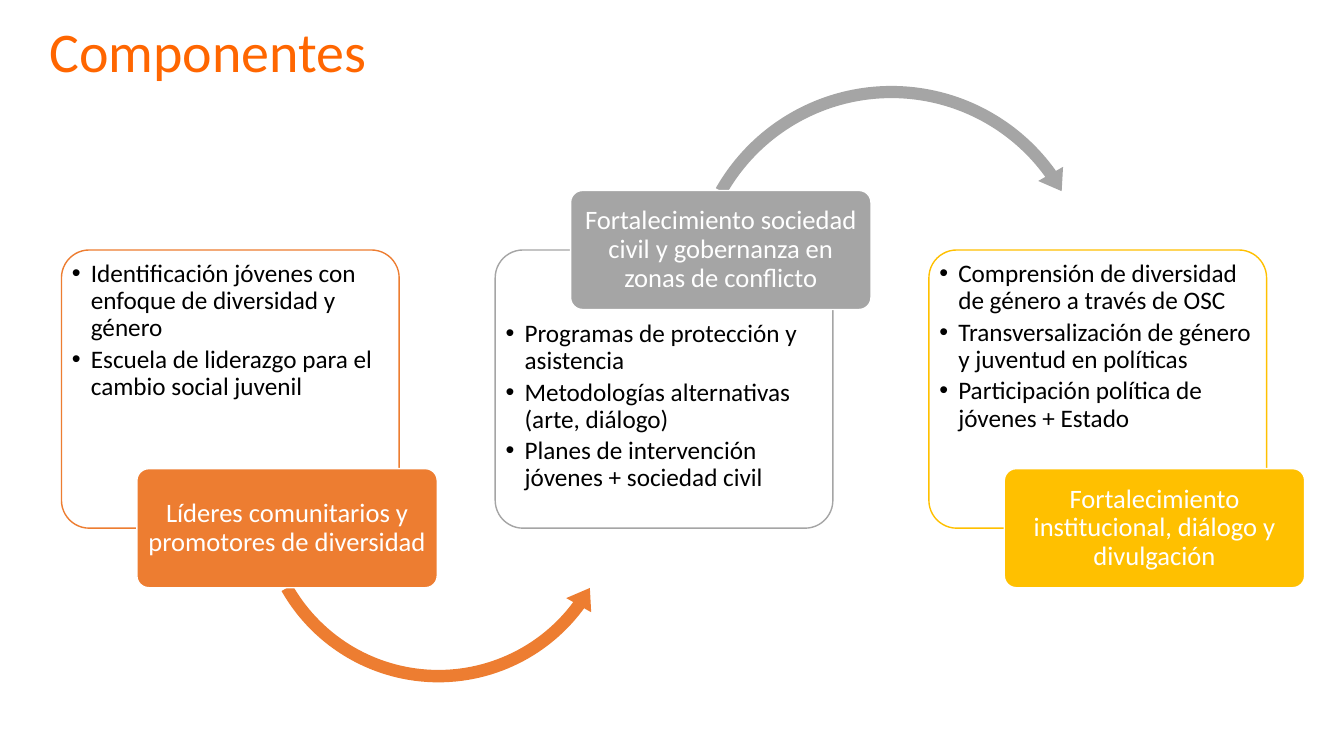
import lxml.etree
import pptx
import pptx.dml.color
import pptx.enum.shapes
import pptx.enum.text
import pptx.oxml.ns
import pptx.util

Cm = pptx.util.Cm
Pt = pptx.util.Pt
qn = pptx.oxml.ns.qn
SHAPES = pptx.enum.shapes.MSO_SHAPE
ALIGN = pptx.enum.text.PP_ALIGN
ANCHOR = pptx.enum.text.MSO_ANCHOR

PANEL_LEFT, PANEL_TOP, PANEL_PITCH = 1.55, 6.3, 10.93
PANEL_WIDTH, PANEL_HEIGHT = 8.51, 7.01
LABEL_LOW, LABEL_HIGH = 5.51, -1.5
LIST_UPPER, LIST_LOWER = 0.17, 1.68

COMPONENTS = [
    {
        "color": "ED7D31",
        "placeholder": 1,
        "label": "Líderes comunitarios y promotores de diversidad",
        "label_offset": LABEL_LOW,
        "list_offset": LIST_UPPER,
        "items": [
            "Identificación jóvenes con enfoque de diversidad y género",
            "Escuela de liderazgo para el cambio social juvenil",
        ],
        "arrow": (SHAPES.LEFT_CIRCULAR_ARROW, 4.75, 1.6, 9.5,
                  (0.033, 4.044, 21.8, 90.25, 0.038)),
    },
    {
        "color": "A5A5A5",
        "placeholder": 2,
        "label": "Fortalecimiento sociedad civil y gobernanza en zonas de conflicto",
        "label_offset": LABEL_HIGH,
        "list_offset": LIST_LOWER,
        "items": [
            "Programas de protección y asistencia",
            "Metodologías alternativas (arte, diálogo)",
            "Planes de intervención jóvenes + sociedad civil",
        ],
        "arrow": (SHAPES.CIRCULAR_ARROW, 4.69, -4.34, 10.59,
                  (0.029, 3.6, 194.65, 125.76, 0.034)),
    },
    {
        "color": "FFC000",
        "placeholder": 4,
        "label": "Fortalecimiento institucional, diálogo y divulgación",
        "label_offset": LABEL_LOW,
        "list_offset": LIST_UPPER,
        "items": [
            "Comprensión de diversidad de género a través de OSC",
            "Transversalización de género y juventud en políticas",
            "Participación política de jóvenes + Estado",
        ],
        "arrow": None,
    },
]


def rgb(value):
    return pptx.dml.color.RGBColor.from_string(value)


def place(shape, left, top, width, height):
    shape.left, shape.top = Cm(left), Cm(top)
    shape.width, shape.height = Cm(width), Cm(height)


def set_frame(shape, anchor, horizontal, vertical):
    frame = shape.text_frame
    frame.word_wrap = True
    frame.auto_size = pptx.enum.text.MSO_AUTO_SIZE.NONE
    frame.vertical_anchor = anchor
    frame.margin_left = frame.margin_right = Cm(horizontal)
    frame.margin_top = frame.margin_bottom = Cm(vertical)
    return frame


def add_text(paragraph, text, size, color, alignment, line_spacing=0.9, space_after=0):
    paragraph.alignment = alignment
    paragraph.line_spacing = line_spacing
    paragraph.space_before = Pt(0)
    paragraph.space_after = Pt(space_after)
    run = paragraph.add_run()
    run.text = text
    run.font.name = "Calibri"
    run.font.size = Pt(size)
    run.font.bold = False
    run.font.color.rgb = rgb(color)


def add_bullet(paragraph):
    properties = paragraph._p.get_or_add_pPr()
    properties.set("marL", str(Cm(0.48)))
    properties.set("indent", str(-Cm(0.48)))
    font = lxml.etree.SubElement(properties, qn("a:buFont"))
    font.set("typeface", "Arial")
    bullet = lxml.etree.SubElement(properties, qn("a:buChar"))
    bullet.set("char", "•")


def add_filled_shape(slide, kind, box, fill, line=None):
    shape = slide.shapes.add_shape(kind, *(Cm(length) for length in box))
    shape.shadow.inherit = False
    shape.fill.solid()
    shape.fill.fore_color.rgb = rgb(fill)
    if line:
        shape.line.color.rgb = rgb(line)
        shape.line.width = Pt(1)
    else:
        shape.line.fill.background()
    return shape


def build_title(slide, left, top, width, height):
    title = slide.shapes.title
    place(title, left, top, width, height)
    frame = set_frame(title, ANCHOR.TOP, 0.25, 0.13)
    add_text(frame.paragraphs[0], "Componentes", 40, "FF6600", ALIGN.LEFT, line_spacing=1)


def build_panel(slide, left, top, width, height, color):
    panel = add_filled_shape(
        slide, SHAPES.ROUNDED_RECTANGLE, (left, top, width, height), "FFFFFF", color)
    panel.adjustments[0] = 0.1
    alpha = lxml.etree.SubElement(panel.element.find(".//" + qn("a:srgbClr")), qn("a:alpha"))
    alpha.set("val", "90000")


def build_list(placeholder, left, top, width, height, items):
    place(placeholder, left, top, width, height)
    placeholder.element.getparent().append(placeholder.element)
    frame = set_frame(placeholder, ANCHOR.TOP, 0.1, 0.1)
    for index, item in enumerate(items):
        paragraph = frame.add_paragraph() if index else frame.paragraphs[0]
        paragraph.level = 1
        add_text(paragraph, item, 18, "000000", ALIGN.LEFT, space_after=3)
        add_bullet(paragraph)


def build_label(slide, left, top, width, height, text, color):
    label = add_filled_shape(
        slide, SHAPES.ROUNDED_RECTANGLE, (left, top, width, height), color, "FFFFFF")
    label.adjustments[0] = 0.1
    frame = set_frame(label, ANCHOR.MIDDLE, 0.1, 0.08)
    add_text(frame.paragraphs[0], text, 19, "FFFFFF", ALIGN.CENTER)


def build_component(slide, left, top, width, height, component):
    color = component["color"]
    build_panel(slide, left, top, width, height, color)
    build_list(slide.placeholders[component["placeholder"]], left + 0.16,
               top + component["list_offset"], width - 0.33, 5.18, component["items"])
    if component["arrow"]:
        kind, across, down, size, adjustments = component["arrow"]
        arrow = add_filled_shape(slide, kind, (left + across, top + down, size, size), color)
        for index, value in enumerate(adjustments):
            arrow.adjustments[index] = value
    build_label(slide, left + 1.9, top + component["label_offset"], 7.57, 3,
                component["label"], color)


def main():
    presentation = pptx.Presentation()
    presentation.slide_width, presentation.slide_height = Cm(33.87), Cm(19.05)
    slide = presentation.slides.add_slide(
        presentation.slide_layouts.get_by_name("Comparison"))
    build_title(slide, 1, 0.28, 15.47, 1.96)
    for column, component in enumerate(COMPONENTS):
        build_component(slide, PANEL_LEFT + column * PANEL_PITCH, PANEL_TOP,
                        PANEL_WIDTH, PANEL_HEIGHT, component)
    for placeholder in list(slide.placeholders):
        if not placeholder.text_frame.text:
            placeholder.element.getparent().remove(placeholder.element)
    presentation.save("out.pptx")


if __name__ == "__main__":
    main()
